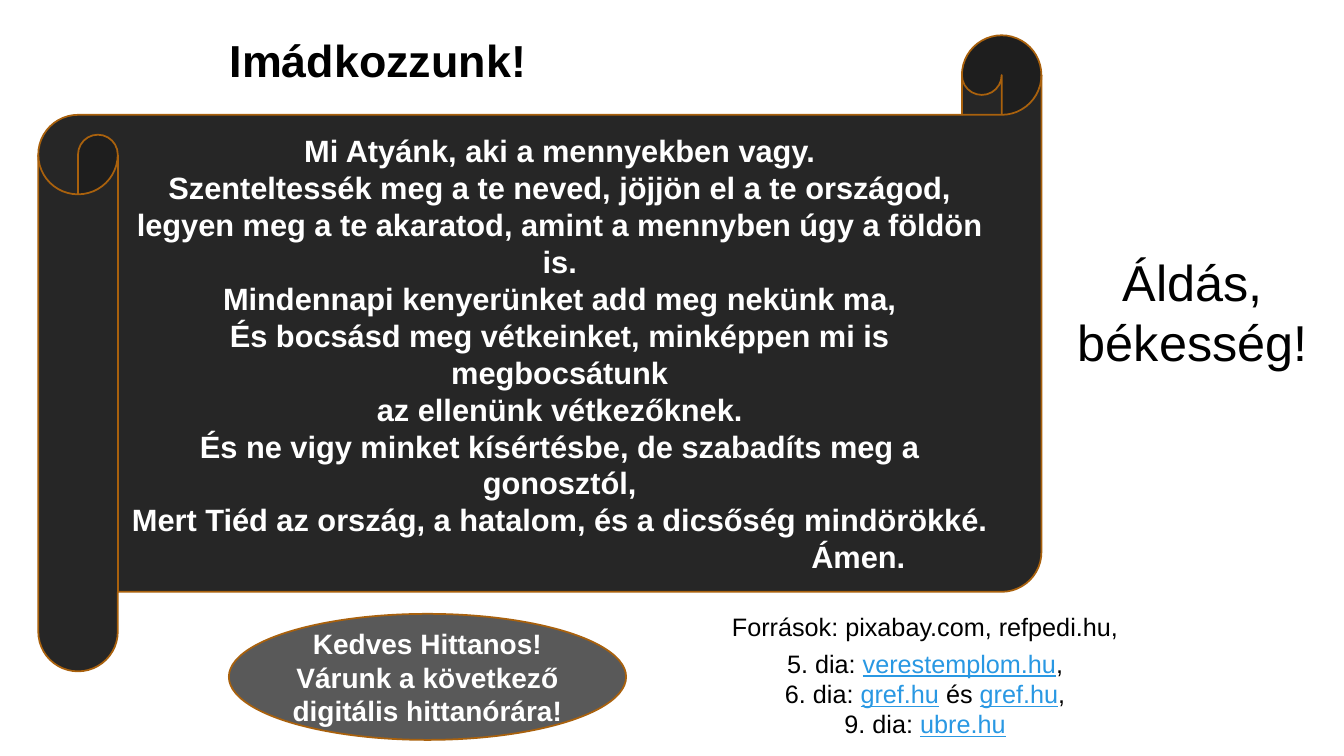
from dataclasses import dataclass

import pptx
import pptx.dml.color
import pptx.enum.shapes
import pptx.enum.text
import pptx.util
from lxml import etree

Align = pptx.enum.text.PP_ALIGN
Anchor = pptx.enum.text.MSO_ANCHOR
Preset = pptx.enum.shapes.MSO_SHAPE

WIDTH, HEIGHT = pptx.util.Inches(13.33), pptx.util.Inches(7.5)
BLACK, WHITE, LINK, OUTLINE = "000000", "FFFFFF", "2998E3", "A9610D"


@dataclass
class Area:
    """Position and size in percent of the slide."""
    left: float
    top: float
    width: float
    height: float


@dataclass
class Style:
    size: int
    color: str = BLACK
    bold: bool = False
    anchor: Anchor = Anchor.TOP


@dataclass
class Panel:
    preset: Preset
    area: Area
    fill: str
    style: Style
    lines: list[str]
    side_inset: float = 0.1


PRAYER = [
    "Mi Atyánk, aki a mennyekben vagy.",
    "Szenteltessék meg a te neved, jöjjön el a te országod,",
    "legyen meg a te akaratod, amint a mennyben úgy a földön is.",
    "Mindennapi kenyerünket add meg nekünk ma,",
    "És bocsásd meg vétkeinket, minképpen mi is megbocsátunk",
    "az ellenünk vétkezőknek.",
    "És ne vigy minket kísértésbe, de szabadíts meg a gonosztól,",
    "Mert Tiéd az ország, a hatalom, és a dicsőség mindörökké.",
    "Ámen.",
]
INVITATION = ["Kedves Hittanos!", "Várunk a következő digitális hittanórára!"]
# Every second piece of a source line is a link
SOURCES = [
    ["Források: pixabay.com, refpedi.hu,"],
    ["5. dia: ", "verestemplom.hu", ","],
    ["6. dia: ", "gref.hu", " és ", "gref.hu", ","],
    ["9. dia: ", "ubre.hu"],
]
PANELS = [
    Panel(Preset.HORIZONTAL_SCROLL, Area(2.85, 4.67, 74.64, 84.13), "262626",
          Style(22, WHITE, True, Anchor.MIDDLE), PRAYER),
    Panel(Preset.OVAL, Area(17.03, 81.2, 29.56, 16.67), "595959",
          Style(20, WHITE, True, Anchor.MIDDLE), INVITATION, 0),
]


def rgb(color: str) -> pptx.dml.color.RGBColor:
    return pptx.dml.color.RGBColor.from_string(color)


def bounds(area: Area) -> tuple[int, int, int, int]:
    return (int(WIDTH * area.left / 100), int(HEIGHT * area.top / 100),
            int(WIDTH * area.width / 100), int(HEIGHT * area.height / 100))


def place(box, area: Area) -> None:
    box.left, box.top, box.width, box.height = bounds(area)


def write(box, lines: list[list[str]], style: Style) -> None:
    """Fill a box with centred lines, underlining every second piece."""
    frame = box.text_frame
    frame.word_wrap = True
    frame.auto_size = pptx.enum.text.MSO_AUTO_SIZE.NONE
    frame.vertical_anchor = style.anchor
    frame.text = "\n".join("" for _ in lines)
    for para, pieces in zip(frame.paragraphs, lines):
        para.alignment = Align.CENTER
        para.space_before = pptx.util.Pt(0)
        for index, piece in enumerate(pieces):
            is_link = index % 2 == 1
            span = para.add_run()
            span.text = piece
            span.font.name = "Arial"
            span.font.size = pptx.util.Pt(style.size)
            span.font.bold = style.bold
            span.font.underline = is_link
            span.font.color.rgb = rgb(LINK if is_link else style.color)


def indent(para, inches: float) -> None:
    properties = para._p.get_or_add_pPr()
    properties.set("marL", str(pptx.util.Inches(inches)))
    properties.set("indent", "0")


def remove_bullet(para) -> None:
    indent(para, 0)
    properties = para._p.get_or_add_pPr()
    etree.SubElement(properties, pptx.oxml.ns.qn("a:buNone"))


def add_panel(page, panel: Panel):
    shape = page.shapes.add_shape(panel.preset, *bounds(panel.area))
    shape.shadow.inherit = False
    shape.fill.solid()
    shape.fill.fore_color.rgb = rgb(panel.fill)
    shape.line.color.rgb = rgb(OUTLINE)
    shape.line.width = pptx.util.Pt(1.25)
    frame = shape.text_frame
    frame.margin_left = frame.margin_right = pptx.util.Inches(panel.side_inset)
    write(shape, [[line] for line in panel.lines], panel.style)
    return shape


def main() -> None:
    deck = pptx.Presentation()
    deck.slide_width, deck.slide_height = WIDTH, HEIGHT
    page = deck.slides.add_slide(deck.slide_layouts[1])

    # Title
    title = page.shapes.title
    place(title, Area(13.35, 3.6, 29.56, 8.53))
    write(title, [["Imádkozzunk!"]], Style(32, bold=True, anchor=Anchor.MIDDLE))

    # Prayer scroll and invitation; the closing word stands to the right
    scroll, _ = [add_panel(page, panel) for panel in PANELS]
    amen = scroll.text_frame.paragraphs[-1]
    amen.alignment = Align.LEFT
    indent(amen, 6.78)

    # Blessing
    blessing = page.shapes.add_textbox(*bounds(Area(79.29, 32.53, 18.9, 17.47)))
    write(blessing, [["Áldás, békesség!"]], Style(36))

    # Sources
    sources = page.placeholders[1]
    place(sources, Area(44.71, 80.13, 48.24, 18))
    write(sources, SOURCES, Style(18))
    for para in sources.text_frame.paragraphs:
        remove_bullet(para)
    sources.text_frame.paragraphs[0].space_after = pptx.util.Pt(5)

    deck.save("out.pptx")


if __name__ == "__main__":
    main()
